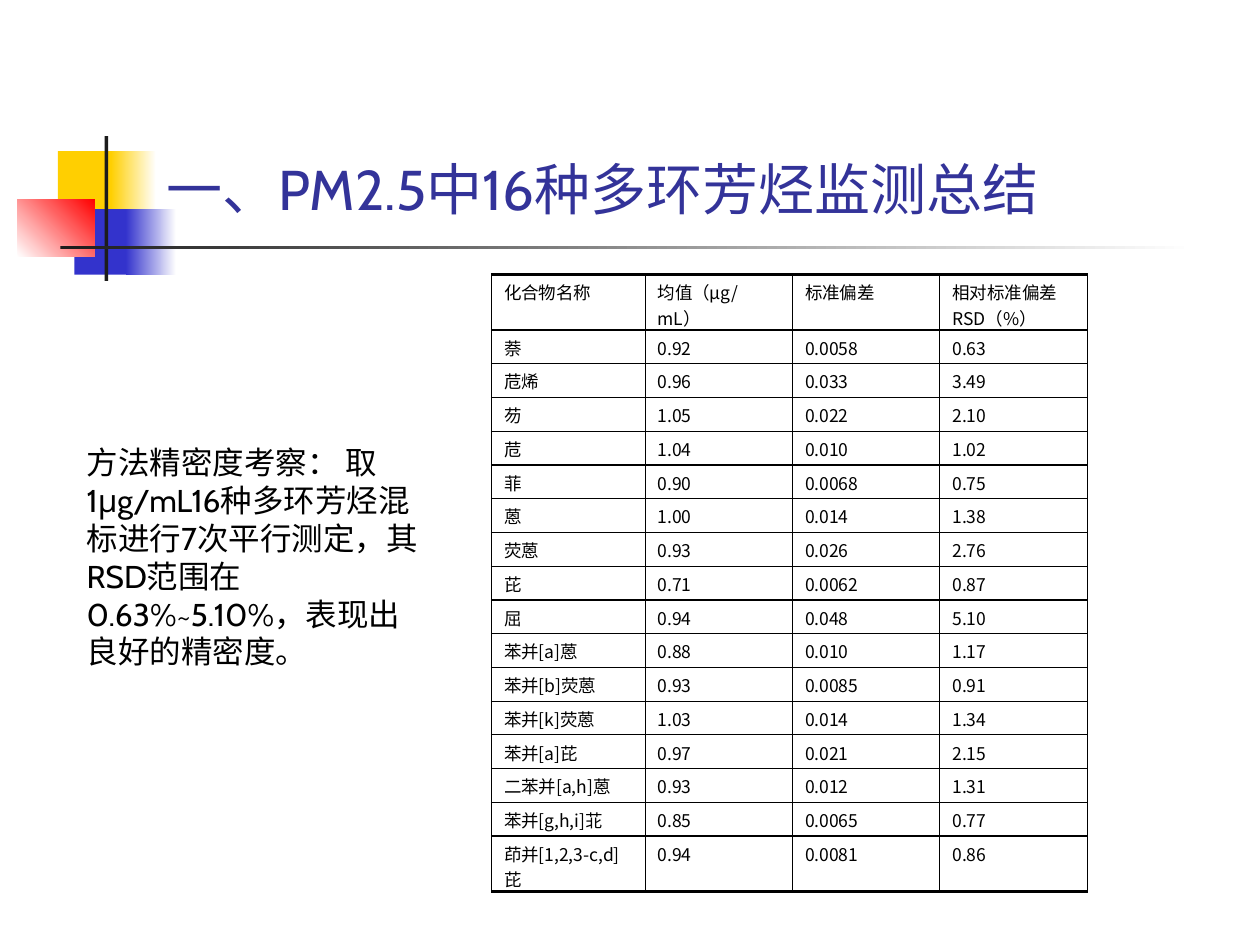
from dataclasses import dataclass
from typing import Optional

from lxml import etree
from pptx import Presentation
from pptx import util as u
from pptx.dml.color import RGBColor
from pptx.enum import shapes, text
from pptx.oxml import ns

YELLOW = RGBColor(0xFF, 0xCF, 0x01)
BLUE = RGBColor(0x33, 0x33, 0xCC)
RED = RGBColor(0xFF, 0x00, 0x00)
CHARCOAL = RGBColor(0x1C, 0x1C, 0x1C)
NAVY = RGBColor(0x33, 0x33, 0x99)
WHITE = RGBColor(0xFF, 0xFF, 0xFF)
BLACK = RGBColor(0x00, 0x00, 0x00)

TEXT_FONT = "Cabin"
TABLE_FONT = "Noto Sans CJK SC"
TITLE = "一、PM2.5中16种多环芳烃监测总结"
BODY = ("方法精密度考察： 取1μg/mL16种多环芳烃混标进行7次平行测定，"
        "其RSD范围在0.63%~5.10%，表现出良好的精密度。")


@dataclass(frozen=True)
class Block:
    left: float
    top: float
    width: float
    height: float
    color: RGBColor
    fade_to: Optional[RGBColor] = None
    angle: float = 0


BLOCKS = [
    Block(0.46, 1.2, 0.48, 0.52, YELLOW),
    Block(0.88, 1.2, 0.36, 0.52, YELLOW, WHITE),
    Block(0.59, 1.66, 0.46, 0.52, BLUE),
    Block(1, 1.66, 0.4, 0.52, BLUE, WHITE),
    Block(0.14, 1.58, 0.61, 0.46, WHITE, RED, 45),
    Block(0.83, 1.08, 0.03, 1.15, CHARCOAL),
    Block(0.48, 1.95, 9, 0.03, CHARCOAL, WHITE),
]

ROWS = [
    ("化合物名称", "均值（μg/mL）", "标准偏差", "相对标准偏差RSD（%）"),
    ("萘", "0.92", "0.0058", "0.63"),
    ("苊烯", "0.96", "0.033", "3.49"),
    ("芴", "1.05", "0.022", "2.10"),
    ("苊", "1.04", "0.010", "1.02"),
    ("菲", "0.90", "0.0068", "0.75"),
    ("蒽", "1.00", "0.014", "1.38"),
    ("荧蒽", "0.93", "0.026", "2.76"),
    ("芘", "0.71", "0.0062", "0.87"),
    ("屈", "0.94", "0.048", "5.10"),
    ("苯并[a]蒽", "0.88", "0.010", "1.17"),
    ("苯并[b]荧蒽", "0.93", "0.0085", "0.91"),
    ("苯并[k]荧蒽", "1.03", "0.014", "1.34"),
    ("苯并[a]芘", "0.97", "0.021", "2.15"),
    ("二苯并[a,h]蒽", "0.93", "0.012", "1.31"),
    ("苯并[g,h,i]苝", "0.85", "0.0065", "0.77"),
    ("茚并[1,2,3-c,d]芘", "0.94", "0.0081", "0.86"),
]
COLUMN_WIDTHS = [1.22, 1.17, 1.17, 1.17]
TABLE_HEIGHT = 4.9
TWO_LINE_HEIGHT = 0.44
ONE_LINE_HEIGHT = (TABLE_HEIGHT - 2 * TWO_LINE_HEIGHT) / (len(ROWS) - 2)


def apply(target, values: dict) -> None:
    for name, value in values.items():
        setattr(target, name, value)


def add_block(slide, block: Block) -> None:
    box = map(u.Inches, (block.left, block.top, block.width, block.height))
    shape = slide.shapes.add_shape(shapes.MSO_SHAPE.RECTANGLE, *box)
    shape.shadow.inherit = False
    shape.line.fill.background()
    if block.fade_to is None:
        shape.fill.solid()
        shape.fill.fore_color.rgb = block.color
        return
    shape.fill.gradient()
    shape.fill.gradient_angle = block.angle
    for stop, color, position in zip(shape.fill.gradient_stops, (block.color, block.fade_to), (0, 1)):
        stop.color.rgb = color
        stop.position = position


def write_text(frame, words: str, font: str, size: float, color: RGBColor) -> None:
    paragraph = frame.paragraphs[0]
    paragraph.alignment = text.PP_ALIGN.LEFT
    run = paragraph.add_run()
    run.text = words
    apply(run.font, {"name": font, "size": u.Pt(size)})
    run.font.color.rgb = color
    latin = run.font._element.find(ns.qn("a:latin"))
    east_asian = etree.Element(ns.qn("a:ea"), typeface=font)
    latin.addnext(east_asian)


def set_borders(cell, widths: dict) -> None:
    properties = cell._tc.get_or_add_tcPr()
    for index, (side, width) in enumerate(widths.items()):
        line = etree.Element(ns.qn(f"a:ln{side}"), w=str(u.Pt(width)))
        fill = etree.SubElement(line, ns.qn("a:solidFill"))
        etree.SubElement(fill, ns.qn("a:srgbClr"), val=str(BLACK))
        properties.insert(index, line)


def add_results_table(slide) -> None:
    frame = slide.shapes.add_table(
        len(ROWS), len(COLUMN_WIDTHS), u.Inches(3.9), u.Inches(2.18),
        u.Inches(sum(COLUMN_WIDTHS)), u.Inches(TABLE_HEIGHT))
    table = frame.table
    apply(table, {"first_row": False, "horz_banding": False})
    for column, width in zip(table.columns, COLUMN_WIDTHS):
        column.width = u.Inches(width)
    last = len(ROWS) - 1
    for row_index, values in enumerate(ROWS):
        height = TWO_LINE_HEIGHT if row_index in (0, last) else ONE_LINE_HEIGHT
        table.rows[row_index].height = u.Inches(height)
        borders = {
            "L": 0.75,
            "R": 0.75,
            "T": {0: 2, 1: 1}.get(row_index, 0.75),
            "B": {0: 1, last: 2}.get(row_index, 0.75),
        }
        for column_index, value in enumerate(values):
            cell = table.cell(row_index, column_index)
            apply(cell, {"margin_top": u.Inches(0.04), "margin_bottom": 0,
                         "vertical_anchor": text.MSO_ANCHOR.TOP})
            cell.fill.background()
            set_borders(cell, borders)
            write_text(cell.text_frame, value, TABLE_FONT, 10, BLACK)


def add_title(slide) -> None:
    title = slide.shapes.title
    apply(title, {"left": u.Inches(1.22), "top": u.Inches(0.21),
                  "width": u.Inches(8.52), "height": u.Inches(1.6)})
    apply(title.text_frame, {"vertical_anchor": text.MSO_ANCHOR.BOTTOM, "word_wrap": True,
                             "auto_size": text.MSO_AUTO_SIZE.NONE})
    write_text(title.text_frame, TITLE, TEXT_FONT, 32, NAVY)
    slide.shapes.element.append(title.element)


def add_body(slide) -> None:
    body = slide.shapes.add_textbox(*map(u.Inches, (0.59, 3.47, 2.84, 1.9)))
    apply(body.text_frame, {"vertical_anchor": text.MSO_ANCHOR.MIDDLE, "word_wrap": True,
                            "auto_size": text.MSO_AUTO_SIZE.SHAPE_TO_FIT_TEXT})
    write_text(body.text_frame, BODY, TEXT_FONT, 18, BLACK)


def main() -> None:
    presentation = Presentation()
    apply(presentation, {"slide_width": u.Inches(10), "slide_height": u.Inches(7.5)})
    slide = presentation.slides.add_slide(presentation.slide_layouts[5])
    for block in BLOCKS:
        add_block(slide, block)
    add_title(slide)
    add_body(slide)
    add_results_table(slide)
    presentation.save("out.pptx")


if __name__ == "__main__":
    main()
